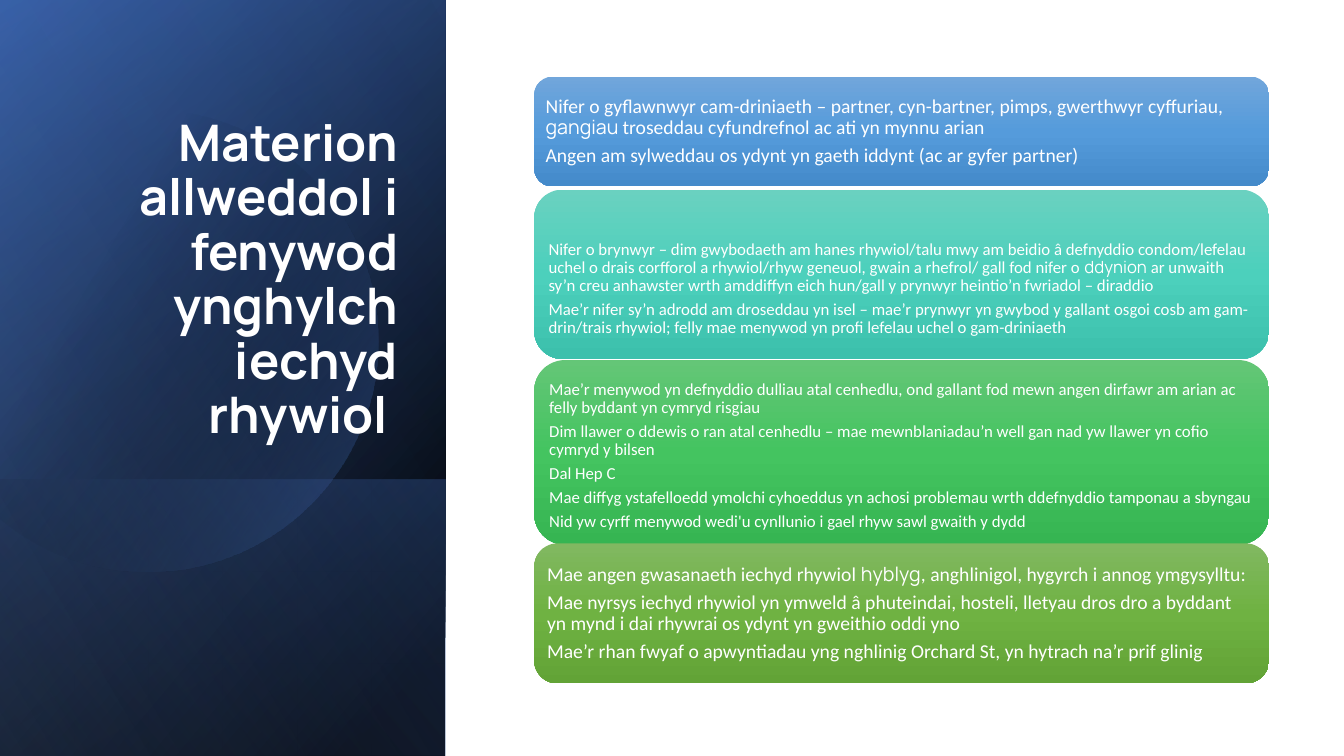
import math

from lxml import etree
from pptx import Presentation
from pptx.dml.color import RGBColor
from pptx.enum import shapes, text
from pptx.oxml.ns import qn
from pptx.util import Pt

WHITE = RGBColor(0xFF, 0xFF, 0xFF)
BLACK = RGBColor(0x00, 0x00, 0x00)
NAVY = RGBColor(0x2F, 0x55, 0x97)
BLUE = RGBColor(0x44, 0x72, 0xC4)
PALE_BLUE = RGBColor(0x8F, 0xAA, 0xDC)
SKY = [RGBColor(0x71, 0xA6, 0xDB), RGBColor(0x55, 0x9B, 0xDB), RGBColor(0x44, 0x8A, 0xCA)]
TEAL = [RGBColor(0x6A, 0xD1, 0xC0), RGBColor(0x4C, 0xD0, 0xBC), RGBColor(0x3C, 0xC0, 0xAC)]
GREEN = [RGBColor(0x64, 0xC6, 0x77), RGBColor(0x44, 0xC4, 0x60), RGBColor(0x36, 0xB5, 0x52)]
OLIVE = [RGBColor(0x81, 0xB8, 0x61), RGBColor(0x6F, 0xB2, 0x42), RGBColor(0x62, 0xA3, 0x36)]

BODY_FONT, ACCENT_FONT = "Calibri", "Manrope"
SLIDE_W, SLIDE_H = 960, 540
PANEL_W = 318.2
CARD_LEFT, CARD_W, CARD_INSET = 381.6, 524.9, 4.3

TITLE = "Materion allweddol i fenywod ynghylch iechyd rhywiol "

# Each paragraph is a list of runs; every second run is in the accent font.
CARDS = [
    dict(top=54.7, height=78.5, size=14, drop=0, colours=SKY, paragraphs=[
        ["Nifer o gyflawnwyr cam-driniaeth – partner, cyn-bartner, pimps, gwerthwyr cyffuriau, ",
         "gangiau ", "troseddau cyfundrefnol ac ati yn mynnu arian"],
        ["Angen am sylweddau os ydynt yn gaeth iddynt (ac ar gyfer partner)"],
    ]),
    dict(top=135.4, height=121, size=12, drop=21, colours=TEAL, paragraphs=[
        ["Nifer o brynwyr – dim gwybodaeth am hanes rhywiol/talu mwy am beidio â defnyddio "
         "condom/lefelau uchel o drais corfforol a rhywiol/rhyw geneuol, gwain a rhefrol/ "
         "gall fod nifer o ", "ddynion",
         " ar unwaith sy’n creu anhawster wrth amddiffyn eich hun/gall y prynwyr heintio’n "
         "fwriadol – diraddio"],
        ["Mae’r nifer sy’n adrodd am droseddau yn isel – mae’r prynwyr yn gwybod y gallant osgoi "
         "cosb am gam-drin/trais rhywiol; felly mae menywod yn profi lefelau uchel o "
         "gam-driniaeth"],
    ]),
    dict(top=257.2, height=131.8, size=12, drop=5, colours=GREEN, paragraphs=[
        ["Mae’r menywod yn defnyddio dulliau atal cenhedlu, ond gallant fod mewn angen dirfawr "
         "am arian ac felly byddant yn cymryd risgiau"],
        ["Dim llawer o ddewis o ran atal cenhedlu – mae mewnblaniadau’n well gan nad yw llawer "
         "yn cofio cymryd y bilsen"],
        ["Dal Hep C"],
        ["Mae diffyg ystafelloedd ymolchi cyhoeddus yn achosi problemau wrth ddefnyddio "
         "tamponau a sbyngau"],
        ["Nid yw cyrff menywod wedi'u cynllunio i gael rhyw sawl gwaith y dydd"],
    ]),
    dict(top=388.1, height=100.1, size=14, drop=0, colours=OLIVE, paragraphs=[
        ["Mae angen gwasanaeth iechyd rhywiol ", "hyblyg",
         ", anghlinigol, hygyrch i annog ymgysylltu:"],
        ["Mae nyrsys iechyd rhywiol yn ymweld â phuteindai, hosteli, lletyau dros dro a byddant "
         "yn mynd i dai rhywrai os ydynt yn gweithio oddi yno"],
        ["Mae’r rhan fwyaf o apwyntiadau yng nghlinig Orchard St, yn hytrach na’r prif glinig"],
    ]),
]

# Gradient stops are (position %, colour, opacity %).
BASE = dict(stops=[(8, BLACK, 100), (100, NAVY, 100)], angle=50)
SHADE = dict(stops=[(0, BLACK, 0), (99, BLUE, 46)], angle=30)
FOOT = dict(stops=[(2, BLUE, 29), (100, BLACK, 30)], angle=130)
DISC = dict(stops=[(29, BLACK, 0), (100, BLUE, 43)], angle=30)
SHEEN = dict(stops=[(0, BLACK, 0), (99, PALE_BLUE, 11)], angle=120)
FOOT_H = 197.3
DISC_X, DISC_Y, DISC_R = 105.1, 243.4, 165


def paint(shape, stops, angle):
    """Give a shape a linear gradient with opacity, no line and no shadow."""
    shape.shadow.inherit = False
    shape.line.fill.background()
    shape.fill.background()
    blank = shape._element.spPr.find(qn("a:noFill"))
    gradient = etree.Element(qn("a:gradFill"), rotWithShape="1")
    stop_list = etree.SubElement(gradient, qn("a:gsLst"))
    for position, colour, opacity in stops:
        stop = etree.SubElement(stop_list, qn("a:gs"), pos=str(position * 1000))
        value = etree.SubElement(stop, qn("a:srgbClr"), val=str(colour))
        if opacity < 100:
            etree.SubElement(value, qn("a:alpha"), val=str(opacity * 1000))
    etree.SubElement(gradient, qn("a:lin"), ang=str(angle * 60000), scaled="0")
    blank.getparent().replace(blank, gradient)


def add_panel(slide, top, height, gradient):
    """Add a mirrored quarter-turned rectangle covering the panel from top down."""
    panel = slide.shapes.add_shape(
        shapes.MSO_SHAPE.RECTANGLE, Pt((PANEL_W - height) / 2),
        Pt(top + (height - PANEL_W) / 2), Pt(height), Pt(PANEL_W))
    panel.rotation = 90
    panel._element.spPr.find(qn("a:xfrm")).set("flipH", "1")
    paint(panel, **gradient)


def add_disc(slide):
    """Add the circle that the slide's left edge cuts off."""
    reach = math.acos(-DISC_X / DISC_R)
    steps = 90
    angles = [-reach + 2 * reach * i / steps for i in range(steps + 1)]
    points = [(Pt(DISC_X + DISC_R * math.cos(a)), Pt(DISC_Y + DISC_R * math.sin(a)))
              for a in angles]
    outline = slide.shapes.build_freeform(*points[0])
    outline.add_line_segments(points[1:], close=True)
    paint(outline.convert_to_shape(), **DISC)


def write(paragraph, words, size, font=BODY_FONT, bold=False):
    run = paragraph.add_run()
    run.text = words
    run.font.name = font
    run.font.size = Pt(size)
    run.font.bold = bold
    run.font.color.rgb = WHITE


def add_card(slide, top, height, size, drop, colours, paragraphs):
    card = slide.shapes.add_shape(shapes.MSO_SHAPE.ROUNDED_RECTANGLE, Pt(CARD_LEFT), Pt(top),
                                  Pt(CARD_W), Pt(height))
    paint(card, [(50 * i, colour, 100) for i, colour in enumerate(colours)], 90)
    frame = card.text_frame
    frame.word_wrap = True
    frame.vertical_anchor = text.MSO_ANCHOR.MIDDLE
    frame.margin_left = frame.margin_right = frame.margin_bottom = Pt(CARD_INSET)
    frame.margin_top = Pt(CARD_INSET + drop)
    for i, runs in enumerate(paragraphs):
        paragraph = frame.add_paragraph() if i else frame.paragraphs[0]
        paragraph.alignment = text.PP_ALIGN.LEFT
        paragraph.line_spacing = 0.9
        paragraph.space_after = Pt(0.35 * size)
        for j, words in enumerate(runs):
            write(paragraph, words, size, font=ACCENT_FONT if j % 2 else BODY_FONT)


def place_title(slide):
    title = slide.shapes.title
    slide.shapes._spTree.append(title._element)
    title.left, title.top, title.width, title.height = Pt(46.1), Pt(132.5), Pt(245.5), Pt(188.6)
    frame = title.text_frame
    frame.word_wrap = True
    frame.auto_size = text.MSO_AUTO_SIZE.NONE
    frame.vertical_anchor = text.MSO_ANCHOR.BOTTOM
    paragraph = frame.paragraphs[0]
    paragraph.alignment = text.PP_ALIGN.RIGHT
    paragraph.line_spacing = 0.9
    write(paragraph, TITLE, 36, font=ACCENT_FONT, bold=True)


def main():
    deck = Presentation()
    deck.slide_width, deck.slide_height = Pt(SLIDE_W), Pt(SLIDE_H)
    slide = deck.slides.add_slide(deck.slide_layouts.get_by_name("Title Only"))
    add_panel(slide, 0, SLIDE_H, BASE)
    add_panel(slide, 0, SLIDE_H, SHADE)
    add_panel(slide, SLIDE_H - FOOT_H, FOOT_H, FOOT)
    add_disc(slide)
    add_panel(slide, 0, SLIDE_H, SHEEN)
    place_title(slide)
    for card in CARDS:
        add_card(slide, **card)
    deck.save("out.pptx")


if __name__ == "__main__":
    main()
